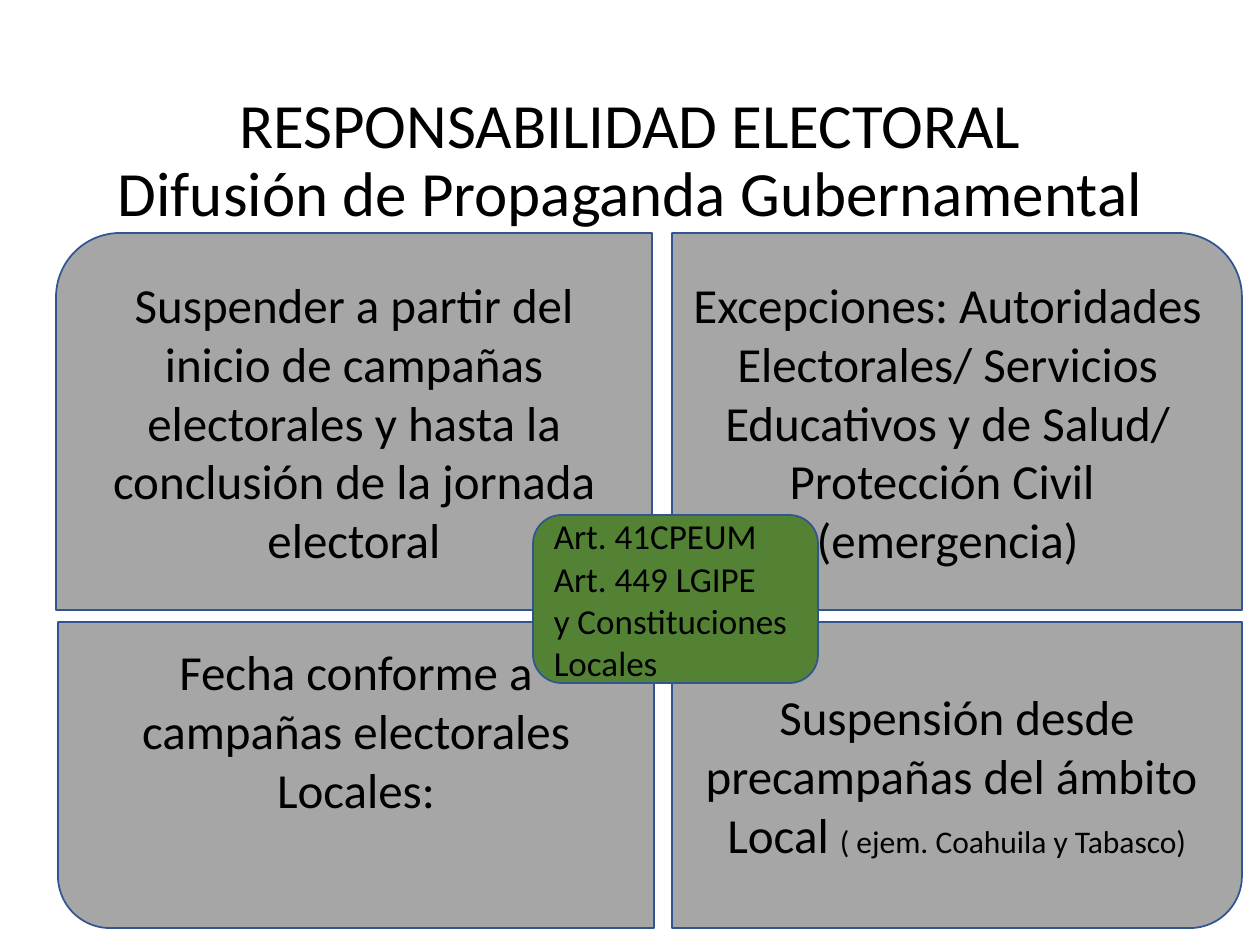
from pptx import Presentation
from pptx.dml.color import RGBColor
from pptx.enum.shapes import MSO_SHAPE
from pptx.enum.text import MSO_ANCHOR, MSO_AUTO_SIZE, PP_ALIGN
from pptx.util import Emu, Pt

BLACK = RGBColor(0x00, 0x00, 0x00)
GRAY = RGBColor(0xA6, 0xA6, 0xA6)
GREEN = RGBColor(0x54, 0x82, 0x35)
BLUE = RGBColor(0x32, 0x54, 0x91)
FONT = "Calibri"

# Content: each paragraph is a list of (text, size) spans
TITLE = [[("RESPONSABILIDAD ELECTORAL\vDifusión de Propaganda Gubernamental", 36)]]
SUSPEND = [[("Suspender a partir del inicio de campañas electorales y hasta "
             "la conclusión de la jornada electoral", 28)]]
EXCEPTIONS = [
    [("Excepciones: Autoridades Electorales/ Servicios Educativos y de Salud/ "
      "Protección Civil ", 28)],
    [("(emergencia)", 28)],
]
DATES = [[("Fecha conforme a campañas electorales Locales:", 28)]]
LOCAL = [
    [("Suspensión desde precampañas del ámbito ", 28)],
    [("Local ", 28), ("( ejem. Coahuila y Tabasco)", 18)],
]
ARTICLES = [[(line, 20)] for line in
            ("Art. 41CPEUM", "Art. 449 LGIPE", "y Constituciones Locales")]

# Grid in px: (start, length)
LEFT, RIGHT = (56, 596), (672, 570)
TOP, BOTTOM = (233, 377), (622, 306)
DIAGONAL, ONE_CORNER = MSO_SHAPE.ROUND_2_DIAG_RECTANGLE, MSO_SHAPE.ROUND_1_RECTANGLE
CORNER = 0.17

# (column, row, preset, corner radii, bottom inset, paragraphs)
PANELS = [
    (LEFT, TOP, DIAGONAL, (CORNER, 0), 6, SUSPEND),
    (RIGHT, TOP, ONE_CORNER, (CORNER,), 6, EXCEPTIONS),
    ((58, 596), BOTTOM, DIAGONAL, (0, CORNER), 96, DATES),
    (RIGHT, BOTTOM, DIAGONAL, (CORNER, 0), 6, LOCAL),
]


def px(value):
    return Emu(round(value * 914400 / 126))


def place(shape, column, row):
    (left, width), (top, height) = column, row
    for name, value in dict(left=left, top=top, width=width, height=height).items():
        setattr(shape, name, px(value))


def write(frame, paragraphs, align, spacing=None):
    settings = dict(word_wrap=True, auto_size=MSO_AUTO_SIZE.NONE,
                    vertical_anchor=MSO_ANCHOR.MIDDLE)
    for name, value in settings.items():
        setattr(frame, name, value)
    for index, spans in enumerate(paragraphs):
        para = frame.add_paragraph() if index else frame.paragraphs[0]
        para.alignment = align
        para.line_spacing = spacing
        if "\v" in spans[0][0]:
            para.text = spans[0][0]
            para_runs = [(run, spans[0][1]) for run in para.runs]
        else:
            para_runs = []
            for text, size in spans:
                span = para.add_run()
                span.text = text
                para_runs.append((span, size))
        for span, size in para_runs:
            for name, value in dict(name=FONT, size=Pt(size)).items():
                setattr(span.font, name, value)
            span.font.color.rgb = BLACK


def add_box(page, preset, column, row, radii, color, paragraphs, align):
    (left, width), (top, height) = column, row
    box = page.shapes.add_shape(preset, px(left), px(top), px(width), px(height))
    box.shadow.inherit = False
    box.fill.solid()
    box.fill.fore_color.rgb = color
    box.line.color.rgb = BLUE
    box.line.width = Pt(1)
    for index, radius in enumerate(radii):
        box.adjustments[index] = radius
    write(box.text_frame, paragraphs, align)
    return box


def main():
    deck = Presentation()
    deck.slide_width, deck.slide_height = px(1260), px(945)
    page = deck.slides.add_slide(deck.slide_layouts[5])

    # Title
    place(page.shapes.title, (0, 1260), (93, 139))
    write(page.shapes.title.text_frame, TITLE, PP_ALIGN.CENTER, 0.9)

    # Four panels
    for column, row, preset, radii, inset, paragraphs in PANELS:
        box = add_box(page, preset, column, row, radii, GRAY, paragraphs,
                      PP_ALIGN.CENTER)
        box.text_frame.margin_bottom = px(inset)

    # Legal basis in the middle
    add_box(page, MSO_SHAPE.ROUNDED_RECTANGLE, (533, 285), (515, 168), (CORNER,),
            GREEN, ARTICLES, PP_ALIGN.LEFT)
    deck.save("out.pptx")


if __name__ == "__main__":
    main()
